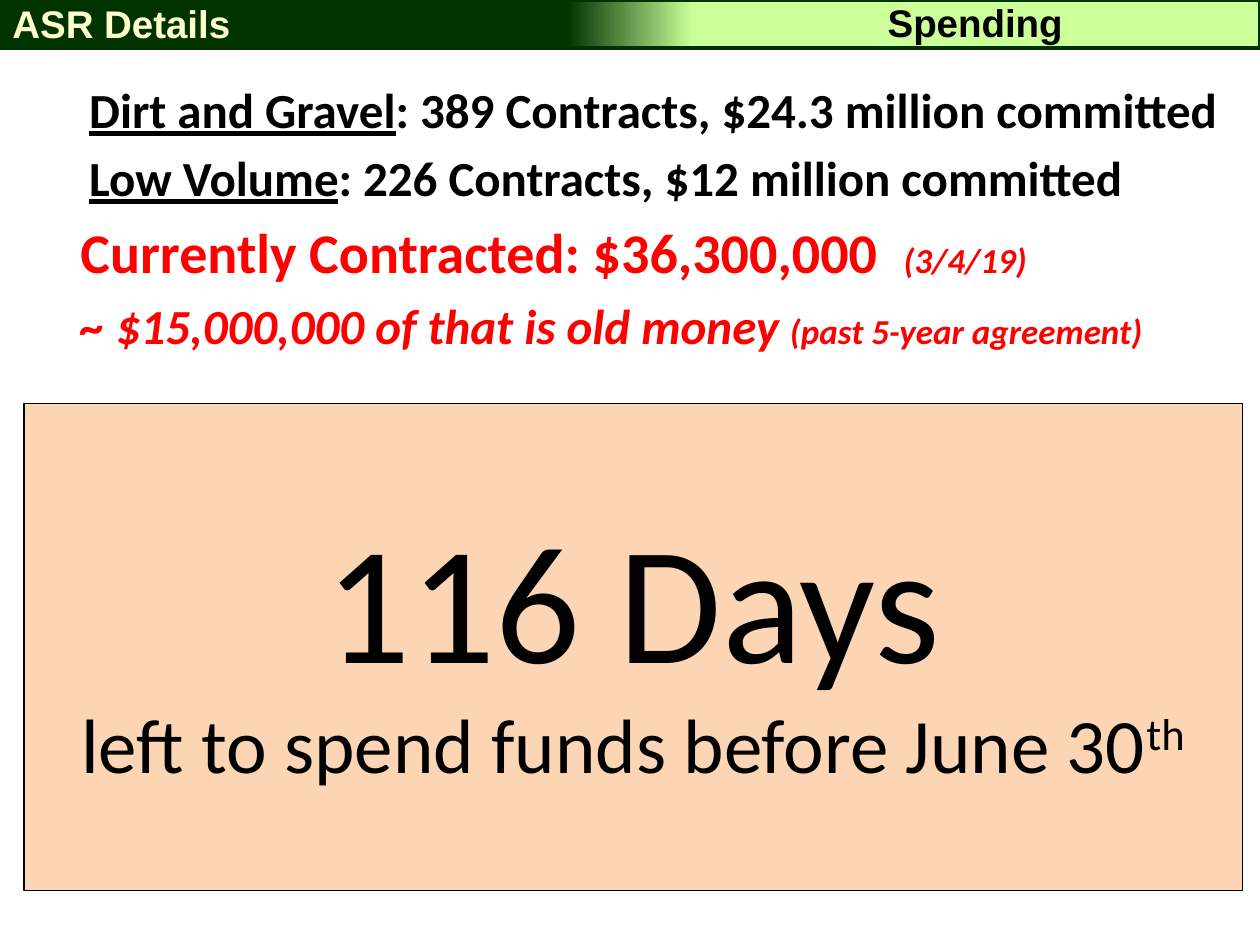
"""Build the ASR spending slide."""
import dataclasses

import pptx
import pptx.dml.color
import pptx.enum.shapes
import pptx.enum.text
import pptx.util

Inches = pptx.util.Inches
Pt = pptx.util.Pt
Align = pptx.enum.text.PP_ALIGN


@dataclasses.dataclass(frozen=True)
class Theme:
    """Hold the colours, fonts and type sizes."""
    black: str = "000000"
    red: str = "FF0000"
    cream: str = "FFFFCC"
    dark_green: str = "003300"
    light_green: str = "CCFF99"
    peach: str = "FCD5B5"
    heading_font: str = "Arial"
    body_font: str = "Calibri"
    heading: int = 22
    note: int = 20
    body: int = 28
    total: int = 32
    caption: int = 44
    countdown: int = 96


class SlideBuilder:
    """Draw styled elements on the current slide."""

    def __init__(self, slide, theme):
        """Keep the slide and its theme."""
        self.slide = slide
        self.theme = theme

    def color(self, value):
        """Turn a hex string into a colour."""
        return pptx.dml.color.RGBColor.from_string(value)

    def text_box(self, left, top, width, height):
        """Add a wrapping text box and return its frame."""
        box = self.slide.shapes.add_textbox(
            Inches(left), Inches(top), Inches(width), Inches(height))
        box.text_frame.word_wrap = True
        return box.text_frame

    def rectangle(self, left, top, width, height, line, weight):
        """Add an outlined rectangle without a shadow."""
        shape = self.slide.shapes.add_shape(
            pptx.enum.shapes.MSO_SHAPE.RECTANGLE,
            Inches(left), Inches(top), Inches(width), Inches(height))
        shape.shadow.inherit = False
        shape.line.color.rgb = self.color(line)
        shape.line.width = Pt(weight)
        return shape

    def span(self, para, text, size, color, font=None, **style):
        """Append a formatted run to a paragraph."""
        span = para.add_run()
        span.text = text
        span.font.name = font or self.theme.body_font
        span.font.size = Pt(size)
        span.font.color.rgb = self.color(color)
        for name, value in style.items():
            setattr(span.font, name, value)
        return span

    def banner(self, left, top, width, height):
        """Add the two-tone gradient bar."""
        bar = self.rectangle(left, top, width, height, self.theme.dark_green, 2)
        bar.fill.gradient()
        bar.fill.gradient_angle = 0
        stops = ((0.45, self.theme.dark_green), (0.55, self.theme.light_green))
        for stop, (position, color) in zip(bar.fill.gradient_stops, stops):
            stop.position = position
            stop.color.rgb = self.color(color)

    def heading(self, text, left, top, width, color, align):
        """Add a banner heading."""
        para = self.text_box(left, top, width, 0.47).paragraphs[0]
        para.alignment = align
        self.span(para, text, self.theme.heading, color,
                  self.theme.heading_font, bold=True)

    def summary(self, left, top, width, height, lines):
        """Add bold lines, each with an indent and a list of spans."""
        frame = self.text_box(left, top, width, height)
        for index, (indent, color, spans) in enumerate(lines):
            para = frame.add_paragraph() if index else frame.paragraphs[0]
            para.space_before = Pt(0.2 * spans[0][1])
            properties = para._p.get_or_add_pPr()
            properties.set("marL", str(Inches(indent)))
            properties.set("indent", "0")
            for text, size, style in spans:
                self.span(para, text, size, color, bold=True, **style)

    def countdown(self, left, top, width, height, days, caption, suffix):
        """Add the panel with the days left and its caption."""
        theme = self.theme
        panel = self.rectangle(left, top, width, height, theme.black, 0.75)
        panel.fill.solid()
        panel.fill.fore_color.rgb = self.color(theme.peach)
        frame = panel.text_frame
        frame.word_wrap = True
        frame.vertical_anchor = pptx.enum.text.MSO_ANCHOR.TOP
        frame.margin_top = Inches(0.73)
        first, second = frame.paragraphs[0], frame.add_paragraph()
        first.alignment = second.alignment = Align.CENTER
        self.span(first, days, theme.countdown, theme.black)
        self.span(second, caption, theme.caption, theme.black)
        raised = self.span(second, suffix, theme.caption, theme.black)
        raised.font._element.set("baseline", "30000")


def main():
    """Build and save the deck."""
    deck = pptx.Presentation()
    deck.slide_width, deck.slide_height = Inches(10), Inches(7.5)
    theme = Theme()
    page = SlideBuilder(deck.slides.add_slide(deck.slide_layouts[6]), theme)
    underlined, italic = {"underline": True}, {"italic": True}
    page.summary(0.42, 0.58, 9.44, 6.75, [
        (0.19, theme.black, [
            ("Dirt and Gravel", theme.body, underlined),
            (": 389 Contracts, $24.3 million committed", theme.body, {})]),
        (0.19, theme.black, [
            ("Low Volume", theme.body, underlined),
            (": 226 Contracts, $12 million committed", theme.body, {})]),
        (0.12, theme.red, [
            ("Currently Contracted: $36,300,000  ", theme.total, {}),
            ("(3/4/19)", theme.note, italic)]),
        (0.12, theme.red, [
            ("~ $15,000,000 of that is old money ", theme.body, italic),
            ("(past 5-year agreement)", theme.note, italic)]),
    ])
    page.banner(0, 0, 10, 0.38)
    page.heading("ASR Details", 0, -0.05, 5.02, theme.cream, Align.LEFT)
    page.heading("Spending", 5.42, -0.06, 4.64, theme.black, Align.CENTER)
    page.countdown(0.19, 3.2, 9.67, 3.87, "116 Days",
                   "left to spend funds before June 30", "th")
    deck.save("out.pptx")


if __name__ == "__main__":
    main()
